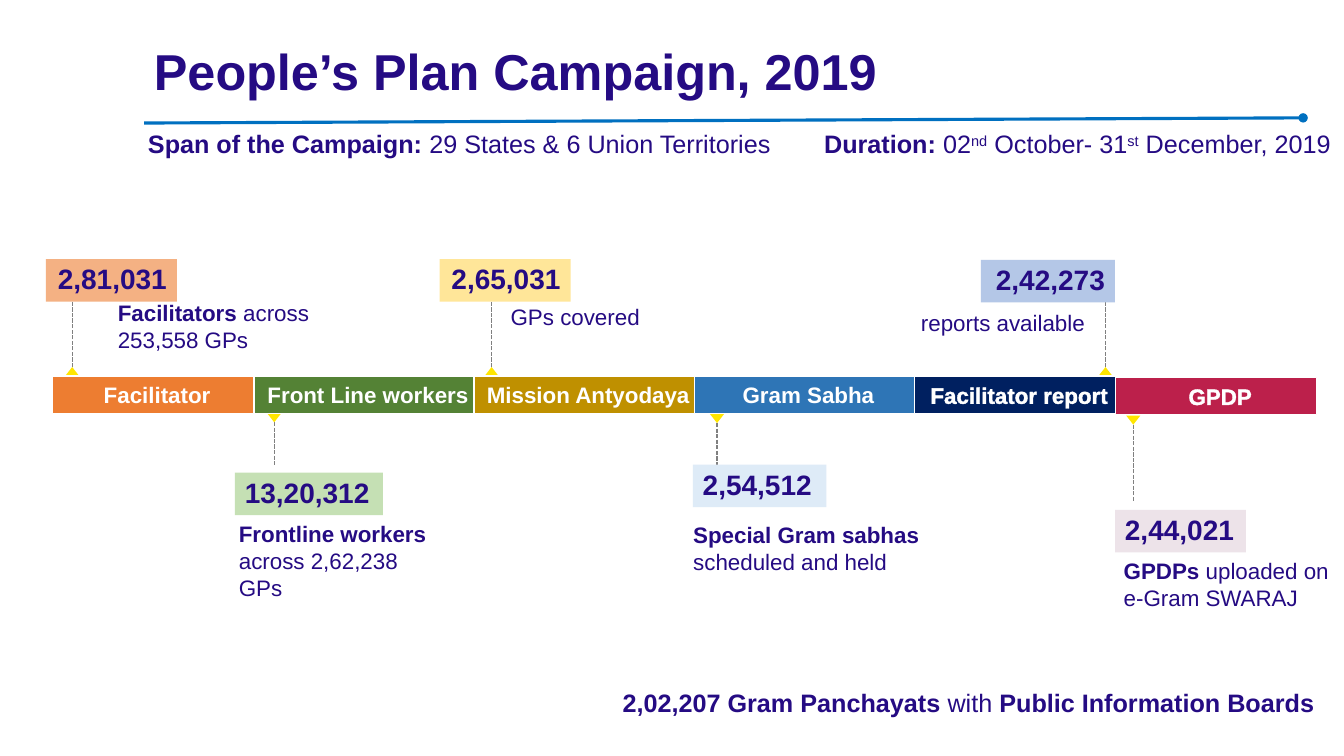
import pptx
import pptx.dml.color
import pptx.enum.dml
import pptx.enum.shapes
import pptx.enum.text
import pptx.oxml
import pptx.oxml.ns
import pptx.util
from lxml import etree

Cm, Pt = pptx.util.Cm, pptx.util.Pt
RGB = pptx.dml.color.RGBColor.from_string
SHAPE = pptx.enum.shapes.MSO_SHAPE
ALIGN = pptx.enum.text.PP_ALIGN
MIDDLE = pptx.enum.text.MSO_ANCHOR.MIDDLE
STRAIGHT = pptx.enum.shapes.MSO_CONNECTOR.STRAIGHT
qn = pptx.oxml.ns.qn

HUE = {
    "ink": "250B83", "white": "FFFFFF", "rule": "0070C0",
    "pin": "808080", "mark": "FFE600",
    "orange": "ED7D31", "peach": "F4B183",
    "green": "548235", "mint": "C5E0B4",
    "gold": "BF9000", "cream": "FFE699",
    "blue": "2E75B6", "ice": "DEEBF7",
    "navy": "002060", "sky": "B4C7E7",
    "red": "BC204B", "rose": "EDE3E9",
}

deck = pptx.Presentation()
deck.slide_width, deck.slide_height = Cm(33.87), Cm(19.05)
slide = deck.slides.add_slide(deck.slide_layouts[6])
shapes = slide.shapes


def write(shape, parts, size, hue="ink"):
    """Fill the first paragraph with (text, bold, superscript) runs."""
    para = shape.text_frame.paragraphs[0]
    for text, bold, raised in parts:
        run = para.add_run()
        run.text = text
        font = run.font
        font.name, font.size, font.bold = "Arial", Pt(size), bold
        font.color.rgb = RGB(HUE[hue])
        if raised:
            run._r.get_or_add_rPr().set("baseline", "30000")
    return para


def draw(kind, area, hue):
    """Add a filled shape without outline or shadow; area is in cm."""
    shape = shapes.add_shape(kind, *map(Cm, area))
    shape.shadow.inherit = False
    shape.fill.solid()
    shape.fill.fore_color.rgb = RGB(HUE[hue])
    shape.line.fill.background()
    return shape


# Lines: the rule under the title, then one dashed pin per stage
pins = [  # centre, end at the band, far end
    (1.82, 9.25, 7.26), (6.91, 10.64, 11.71), (12.39, 9.25, 7.11),
    (18.07, 10.66, 12.62), (27.86, 9.25, 7.26), (28.56, 10.7, 12.65),
]
lines = [(3.63, 3.1, 32.84, 2.97, "rule", 2.25)]
lines += [(x, near, x, far, "pin", 1) for x, near, far in pins]
for x1, y1, x2, y2, hue, width in lines:
    line = shapes.add_connector(STRAIGHT, Cm(x1), Cm(y1), Cm(x2), Cm(y2))
    line.line.color.rgb = RGB(HUE[hue])
    line.line.width = Pt(width)
    if hue == "pin":
        line.line.dash_style = pptx.enum.dml.MSO_LINE.SQUARE_DOT
    else:
        etree.SubElement(line.line._get_or_add_ln(), qn("a:tailEnd"), type="oval")
    etree.SubElement(line._element.spPr, qn("a:effectLst"))

for x, near, far in pins:
    down = far > near
    top = near - 0.23 if down else near
    mark = draw(SHAPE.ISOSCELES_TRIANGLE, (x - 0.18, top, 0.36, 0.23), "mark")
    mark.rotation = 180 if down else 0

# Counts above and below the band, each kept on one line
counts = [  # number, left, top, width, colour, alignment
    ("2,81,031", 1.16, 6.53, 3.3, "peach", ALIGN.RIGHT),
    ("13,20,312", 5.92, 11.91, 3.73, "mint", ALIGN.LEFT),
    ("2,65,031", 11.08, 6.53, 3.3, "cream", ALIGN.RIGHT),
    ("2,54,512", 17.46, 11.71, 3.37, "ice", ALIGN.LEFT),
    ("2,42,273", 24.72, 6.55, 3.38, "sky", ALIGN.RIGHT),
    ("2,44,021", 28.1, 12.85, 3.3, "rose", ALIGN.LEFT),
]
for number, left, top, width, hue, align in counts:
    box = draw(SHAPE.RECTANGLE, (left, top, width, 1.07), hue)
    box.text_frame.vertical_anchor = pptx.enum.text.MSO_ANCHOR.TOP
    para = write(box, [(number, True, False)], 20)
    para.alignment, para.line_spacing, para.space_after = align, 0.95, Pt(4)

# Band of stages, laid end to end
stages = [  # name, width, top, colour, left margin, outlined letters
    ("Facilitator", 5.08, 9.48, "orange", 0.25, False),
    ("Front Line workers", 5.55, 9.48, "green", 0.25, False),
    ("Mission Antyodaya", 5.55, 9.48, "gold", 0.25, False),
    ("Gram Sabha", 5.55, 9.48, "blue", 0.25, False),
    ("Facilitator report", 5.07, 9.48, "navy", 0, True),
    ("GPDP", 5.06, 9.51, "red", 0, True),
]
left = 1.32
for name, width, top, hue, margin, outlined in stages:
    bar = draw(SHAPE.RECTANGLE, (left, top, width, 0.94), hue)
    left += width
    bar.line.color.rgb = RGB(HUE["white"])
    bar.line.width = Pt(1)
    frame = bar.text_frame
    frame.vertical_anchor = MIDDLE
    frame.margin_left = Cm(0.2)
    frame.margin_top = frame.margin_right = frame.margin_bottom = 0
    para = write(bar, [(name, True, False)], 16, "white")
    para.alignment, para.space_after = ALIGN.CENTER, Pt(6)
    props = para._p.get_or_add_pPr()
    props.set("marL", str(Cm(margin)))
    props.set("indent", str(Cm(-0.25)))
    if outlined:
        edge = etree.Element(qn("a:ln"), w=str(Pt(0.25)))
        fill = etree.SubElement(edge, qn("a:solidFill"))
        etree.SubElement(fill, qn("a:srgbClr"), val=HUE["white"])
        para.runs[0]._r.get_or_add_rPr().insert(0, edge)

# Title, campaign facts and notes
texts = [  # left, top, width, height, size, wrap, runs
    (3.63, 0.03, 29.21, 3.68, 36, True,
     [("People’s Plan Campaign, 2019", True, False)]),
    (3.48, 3.12, 16.36, 1.02, 18, False,
     [("Span of the Campaign: ", True, False),
      ("29 States & 6 Union Territories", False, False)]),
    (20.52, 3.12, 13.51, 1.02, 18, False,
     [("Duration: ", True, False), ("02", False, False), ("nd", False, True),
      (" October- 31", False, False), ("st", False, True),
      (" December, 2019", False, False)]),
    (15.44, 17.2, 18.42, 1.02, 18, True,
     [("2,02,207 Gram Panchayats ", True, False), ("with ", False, False),
      ("Public Information Boards", True, False)]),
    (2.72, 7.42, 5.74, 1.63, 16, True,
     [("Facilitators ", True, False), ("across 253,558 GPs", False, False)]),
    (5.77, 12.98, 5.54, 2.31, 16, True,
     [("Frontline workers ", True, False), ("across 2,62,238 GPs", False, False)]),
    (12.62, 7.52, 3.81, 0.94, 16, False, [("GPs covered", False, False)]),
    (17.22, 13, 6.58, 1.63, 16, True,
     [("Special Gram sabhas ", True, False), ("scheduled and held", False, False)]),
    (22.96, 7.66, 4.75, 0.94, 16, True, [("reports available", False, False)]),
    (28.07, 13.92, 5.82, 1.63, 16, True,
     [("GPDPs ", True, False), ("uploaded on e-Gram SWARAJ", False, False)]),
]
for left, top, width, height, size, wrap, parts in texts:
    box = shapes.add_textbox(Cm(left), Cm(top), Cm(width), Cm(height))
    box.text_frame.word_wrap = wrap
    para = write(box, parts, size)
    if size == 36:
        box.text_frame.vertical_anchor = MIDDLE
        para.line_spacing = 0.9

deck.save("out.pptx")
